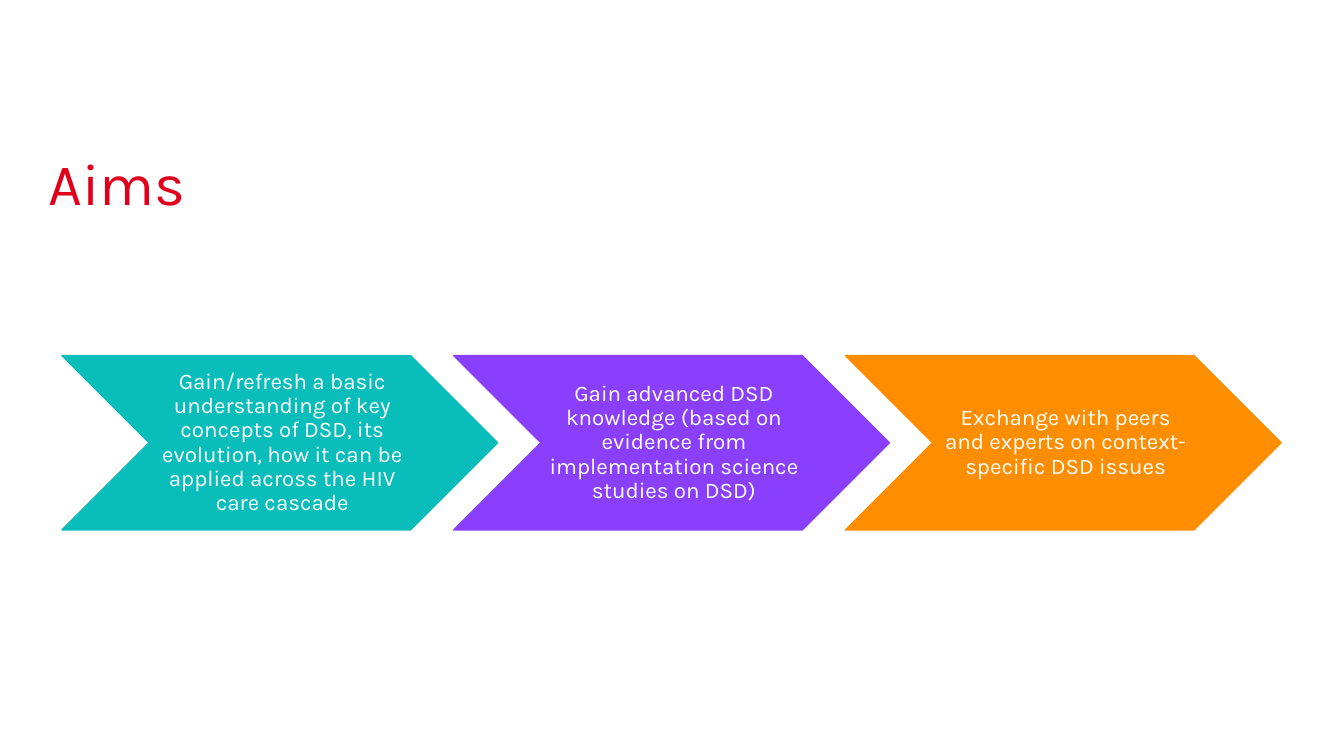
from dataclasses import dataclass

from pptx import Presentation
from pptx import util as u
from pptx.dml.color import RGBColor
from pptx.enum import shapes, text
from pptx.slide import Slide


@dataclass(frozen=True)
class Theme:
    font: str = "Karla"
    title_size: int = 42
    aim_size: int = 16
    red: str = "E0001B"
    white: str = "FFFFFF"
    teal: str = "08BDBA"
    purple: str = "8A3FFC"
    orange: str = "FF8D00"


@dataclass(frozen=True)
class Aim:
    wording: str
    color: str


THEME = Theme()
AIMS = (
    Aim("Gain/refresh a basic understanding of key concepts of DSD, its evolution, "
        "how it can be applied across the HIV care cascade", THEME.teal),
    Aim("Gain advanced DSD knowledge (based on evidence from implementation science "
        "studies on DSD)", THEME.purple),
    Aim("Exchange with peers and experts on context-specific DSD issues", THEME.orange),
)

ROW_LEFT, ROW_TOP = 44.3, 254
CHEVRON_WIDTH, CHEVRON_HEIGHT = 311.2, 124.5
CHEVRON_STEP = 279.8


def set_text(frame: text.MSO_ANCHOR, wording: str, size: int, color: str,
             margins: tuple[float, float, float, float],
             anchor: text.MSO_ANCHOR, align: text.PP_ALIGN) -> None:
    """Fill a text frame with one paragraph; margins run left, top, right, bottom."""
    frame.word_wrap = True
    frame.auto_size = text.MSO_AUTO_SIZE.NONE
    frame.vertical_anchor = anchor
    (frame.margin_left, frame.margin_top,
     frame.margin_right, frame.margin_bottom) = map(u.Pt, margins)
    frame.text = wording
    paragraph = frame.paragraphs[0]
    paragraph.alignment = align
    paragraph.line_spacing = 0.9
    paragraph.font.name = THEME.font
    paragraph.font.size = u.Pt(size)
    paragraph.font.color.rgb = RGBColor.from_string(color)


def add_title(page: Slide, wording: str) -> None:
    title = page.shapes.title
    title.left, title.top = u.Pt(34.6), u.Pt(110.2)
    title.width, title.height = u.Pt(487.4), u.Pt(99.4)
    set_text(title.text_frame, wording, THEME.title_size, THEME.red,
             (0, 0, 0, 0), text.MSO_ANCHOR.TOP, text.PP_ALIGN.LEFT)


def add_chevron(page: Slide, aim: Aim, left: float) -> None:
    chevron = page.shapes.add_shape(
        shapes.MSO_SHAPE.CHEVRON, u.Pt(left), u.Pt(ROW_TOP),
        u.Pt(CHEVRON_WIDTH), u.Pt(CHEVRON_HEIGHT))
    chevron.shadow.inherit = False
    chevron.fill.solid()
    chevron.fill.fore_color.rgb = RGBColor.from_string(aim.color)
    chevron.line.color.rgb = RGBColor.from_string(aim.color)
    chevron.line.width = u.Pt(1)
    set_text(chevron.text_frame, aim.wording, THEME.aim_size, THEME.white,
             (5, 1.5, 1.5, 1.5), text.MSO_ANCHOR.MIDDLE, text.PP_ALIGN.CENTER)


def main() -> None:
    deck = Presentation()
    deck.slide_width, deck.slide_height = u.Pt(960), u.Pt(540)
    page = deck.slides.add_slide(deck.slide_layouts.get_by_name("Title Only"))
    add_title(page, "Aims")
    for index, aim in enumerate(AIMS):
        add_chevron(page, aim, ROW_LEFT + index * CHEVRON_STEP)
    deck.save("out.pptx")


if __name__ == "__main__":
    main()
